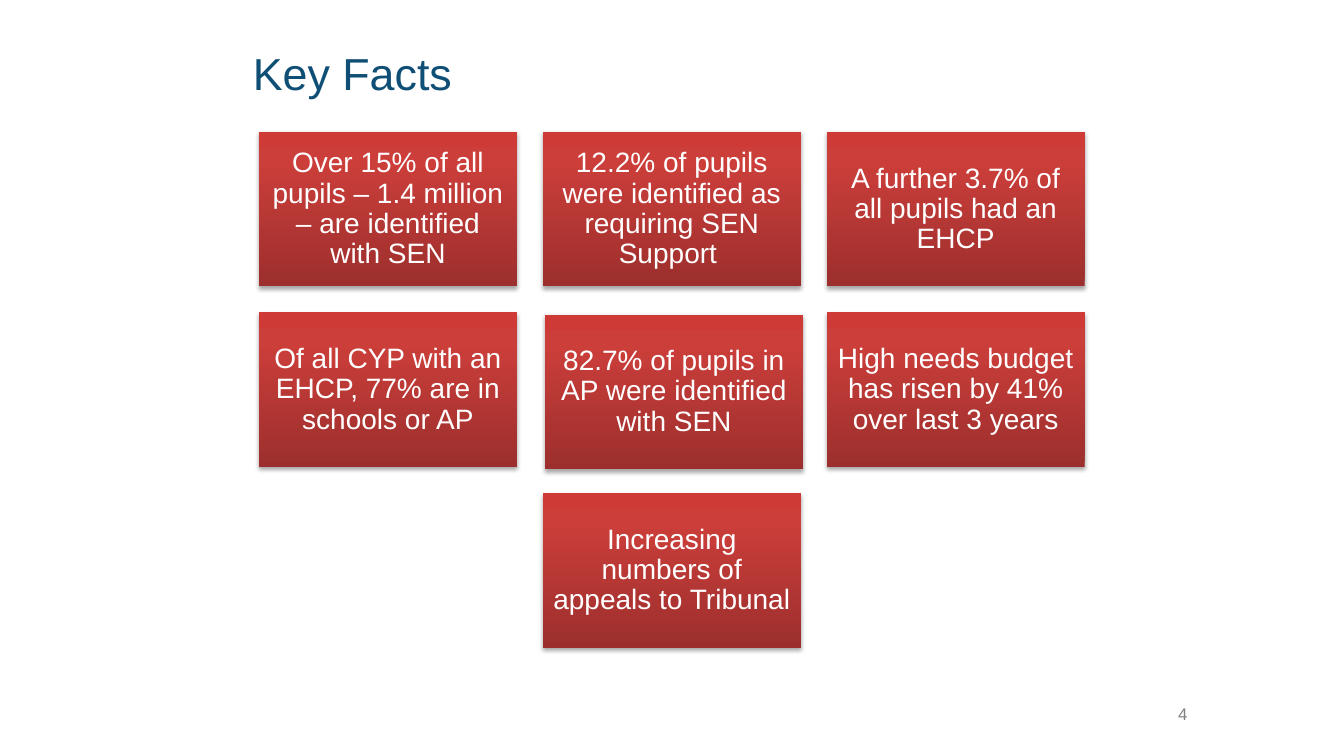
from pptx import Presentation
from pptx.dml.color import RGBColor
from pptx.enum.shapes import MSO_SHAPE
from pptx.enum.text import MSO_ANCHOR, PP_ALIGN
from pptx.oxml import parse_xml
from pptx.oxml.ns import nsdecls
from pptx.util import Pt

RECTANGLE = MSO_SHAPE.RECTANGLE
TOP, MIDDLE = MSO_ANCHOR.TOP, MSO_ANCHOR.MIDDLE
LEFT, CENTER = PP_ALIGN.LEFT, PP_ALIGN.CENTER

NAVY = RGBColor(0x10, 0x4F, 0x75)
WHITE = RGBColor(0xFF, 0xFF, 0xFF)
GREY = RGBColor(0x80, 0x80, 0x80)
BLACK = RGBColor(0x00, 0x00, 0x00)
RED_STOPS = [
    (0, RGBColor(0x9C, 0x2F, 0x2D)),
    (80, RGBColor(0xCB, 0x3E, 0x3A)),
    (100, RGBColor(0xCE, 0x3B, 0x37)),
]

TITLE_FORMAT = {"size": Pt(32), "name": "Arial"}
CARD_FORMAT = {"size": Pt(20), "name": "Arial"}
NUMBER_FORMAT = {"size": Pt(12), "name": "Arial"}

GRID_LEFT, GRID_TOP = 185, 94.2
COLUMN_STEP, ROW_STEP = 202.75, 129
CARD_WIDTH, CARD_HEIGHT = 184.3, 110.5
CARD_INSET = 6

FACTS = [
    (0, 0, 0, "Over 15% of all pupils – 1.4 million – are identified with SEN"),
    (0, 1, 0, "12.2% of pupils were identified as requiring SEN Support "),
    (0, 2, 0, "A further 3.7% of all pupils had an EHCP"),
    (1, 0, 0, "Of all CYP with an EHCP, 77% are in schools or AP"),
    (1, 1, 1.5, "82.7% of pupils in AP were identified with SEN"),
    (1, 2, 0, "High needs budget has risen by 41% over last 3 years"),
    (2, 1, 0, "Increasing numbers of appeals to Tribunal"),
]


def write_text(shape, text, formats, color, anchor, alignment):
    """Write one formatted paragraph into a shape and return it."""
    frame = shape.text_frame
    frame.word_wrap = True
    frame.vertical_anchor = anchor
    paragraph = frame.paragraphs[0]
    paragraph.text = text
    paragraph.alignment = alignment
    for name, value in formats.items():
        setattr(paragraph.font, name, value)
    paragraph.font.color.rgb = color
    return paragraph


def add_label(slide, left, top, width, height, text, formats, color, anchor):
    """Add a left-aligned text box."""
    box = slide.shapes.add_textbox(Pt(left), Pt(top), Pt(width), Pt(height))
    write_text(box, text, formats, color, anchor, LEFT)


def style_card(shape):
    """Give a card its red gradient and soft shadow, without an outline."""
    shape.line.fill.background()
    shape.shadow.inherit = False
    stops = "".join(
        f'<a:gs pos="{position * 1000}"><a:srgbClr val="{color}"/></a:gs>'
        for position, color in RED_STOPS
    )
    gradient = parse_xml(
        f'<a:gradFill {nsdecls("a")} rotWithShape="1"><a:gsLst>{stops}</a:gsLst>'
        '<a:lin ang="16200000" scaled="0"/></a:gradFill>'
    )
    shadow = parse_xml(
        f'<a:outerShdw {nsdecls("a")} blurRad="{Pt(3.15)}" dist="{Pt(1.8)}" '
        f'dir="5400000" rotWithShape="0"><a:srgbClr val="{BLACK}">'
        '<a:alpha val="35000"/></a:srgbClr></a:outerShdw>'
    )
    properties = shape.element.spPr
    properties.find("{*}prstGeom").addnext(gradient)
    properties.find("{*}effectLst").append(shadow)


def add_card(slide, row, column, nudge, text):
    """Add one fact card at its place in the grid."""
    left = GRID_LEFT + column * COLUMN_STEP + nudge
    top = GRID_TOP + row * ROW_STEP + nudge
    card = slide.shapes.add_shape(
        RECTANGLE, Pt(left), Pt(top), Pt(CARD_WIDTH), Pt(CARD_HEIGHT)
    )
    style_card(card)
    for side in ("left", "top", "right", "bottom"):
        setattr(card.text_frame, f"margin_{side}", Pt(CARD_INSET))
    paragraph = write_text(card, text, CARD_FORMAT, WHITE, MIDDLE, CENTER)
    paragraph.line_spacing = 0.9


def main():
    """Build the key facts slide."""
    presentation = Presentation()
    presentation.slide_width = Pt(960)
    presentation.slide_height = Pt(540)
    slide = presentation.slides.add_slide(presentation.slide_layouts[6])
    add_label(slide, 173.5, 26, 612, 51, "Key Facts", TITLE_FORMAT, NAVY, MIDDLE)
    for fact in FACTS:
        add_card(slide, *fact)
    add_label(slide, 834.5, 499, 54, 28.8, "4", NUMBER_FORMAT, GREY, TOP)
    presentation.save("out.pptx")


if __name__ == "__main__":
    main()
